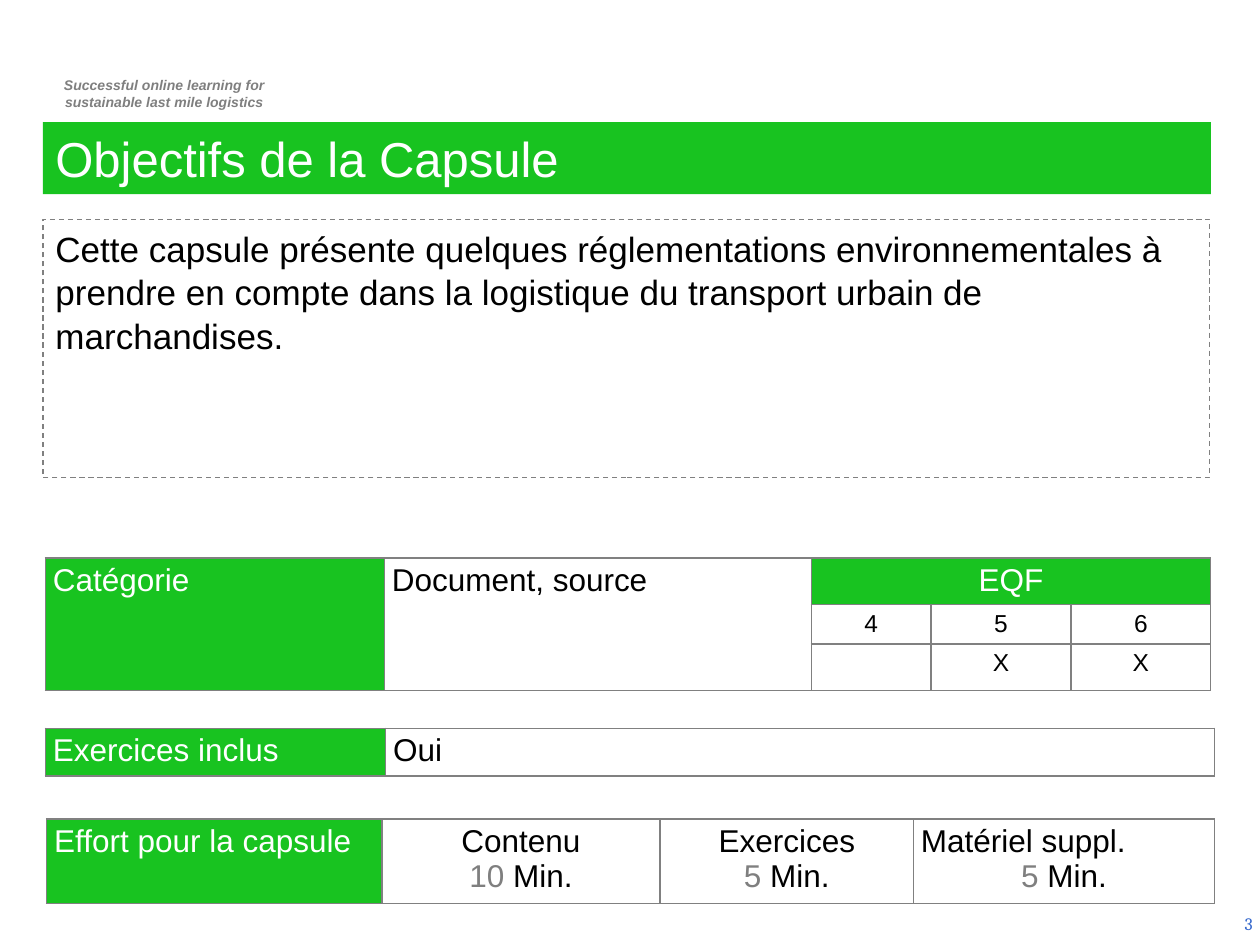
from pptx import Presentation
from pptx.dml.color import RGBColor
from pptx.enum.dml import MSO_LINE
from pptx.enum.text import MSO_ANCHOR as ANCHOR, MSO_AUTO_SIZE, PP_ALIGN as ALIGN
from pptx.oxml.ns import qn
from pptx.util import Inches, Pt
from lxml.etree import SubElement

GREEN = RGBColor(0x18, 0xC3, 0x20)
WHITE = RGBColor(0xFF, 0xFF, 0xFF)
BLACK = RGBColor(0, 0, 0)
GREY = RGBColor(0x80, 0x80, 0x80)
MUTED = RGBColor(0x7F, 0x7F, 0x7F)
BLUE = RGBColor(0x33, 0x66, 0xCC)


def write(tf, *lines, size=18, color=BLACK, font="Arial", align=ALIGN.LEFT,
          bold=False, italic=False, spacing=None):
    """Fill a text frame; a line is a string or a list of (text, colour) runs."""
    for i, line in enumerate(lines):
        p = tf.add_paragraph() if i else tf.paragraphs[0]
        p.alignment = align
        p.space_before = Pt(0)
        if spacing:
            p.line_spacing = spacing
        for text, run_color in [(line, color)] if isinstance(line, str) else line:
            r = p.add_run()
            r.text = text
            f = r.font
            f.name, f.size, f.bold, f.italic = font, Pt(size), bold, italic
            f.color.rgb = run_color


def place(sp, x, y, w, h, anchor=ANCHOR.TOP):
    sp.left, sp.top, sp.width, sp.height = map(Inches, (x, y, w, h))
    tf = sp.text_frame
    tf.word_wrap = True
    tf.auto_size = MSO_AUTO_SIZE.NONE
    tf.vertical_anchor = anchor
    return tf


def add_text(s, box, *lines, anchor=ANCHOR.TOP, **fmt):
    sp = s.shapes.add_textbox(0, 0, 0, 0)
    write(place(sp, *box, anchor=anchor), *lines, **fmt)


def add_title(s, text):
    sp = s.shapes.title
    sp.fill.solid()
    sp.fill.fore_color.rgb = GREEN
    write(place(sp, 0.34, 0.97, 9.27, 0.57), text, size=28, color=WHITE)


def add_summary(s, text):
    sp = s.placeholders[1]
    sp.line.color.rgb = GREY
    sp.line.width = Pt(0.75)
    sp.line.dash_style = MSO_LINE.DASH
    tf = place(sp, 0.34, 1.74, 9.26, 2.05)
    write(tf, text, size=20, spacing=1.04)
    pPr = tf.paragraphs[0]._p.get_or_add_pPr()
    pPr.set("marL", "0")
    pPr.set("indent", "0")
    SubElement(pPr, qn("a:buNone"))


def add_borders(cell):
    tcPr = cell._tc.get_or_add_tcPr()
    for side in ("L", "R", "T", "B"):
        ln = SubElement(tcPr, qn(f"a:ln{side}"), w=str(Pt(1)))
        fill = SubElement(ln, qn("a:solidFill"))
        SubElement(fill, qn("a:srgbClr"), val=str(GREY))


def add_grid(s, x, y, cols, rows):
    """Add an unstyled table with grey borders on every cell."""
    frame = s.shapes.add_table(len(rows), len(cols), Inches(x), Inches(y),
                               Inches(sum(cols)), Inches(sum(rows)))
    table = frame.table
    table.first_row = table.horz_banding = False
    for col, width in zip(table.columns, cols):
        col.width = Inches(width)
    for row, height in zip(table.rows, rows):
        row.height = Inches(height)
    for cell in table.iter_cells():
        cell.margin_left = cell.margin_right = Inches(0.06)
        cell.margin_top = cell.margin_bottom = Inches(0.04)
        add_borders(cell)
        cell.fill.background()
    return table


def label(cell, text, align=ALIGN.JUSTIFY):
    cell.fill.solid()
    cell.fill.fore_color.rgb = GREEN
    write(cell.text_frame, text, color=WHITE, align=align)


def add_category_table(s):
    t = add_grid(s, 0.36, 4.43, [2.69, 3.39, 0.95, 1.11, 1.11], [0.37, 0.31, 0.37])
    for col in (0, 1):
        t.cell(0, col).merge(t.cell(2, col))
    t.cell(0, 2).merge(t.cell(0, 4))
    label(t.cell(0, 0), "Catégorie")
    write(t.cell(0, 1).text_frame, "Document, source", align=ALIGN.JUSTIFY)
    label(t.cell(0, 2), "EQF", align=ALIGN.CENTER)
    for col, (level, mark) in enumerate([("4", ""), ("5", "X"), ("6", "X")], start=2):
        for row, text in ((1, level), (2, mark)):
            write(t.cell(row, col).text_frame, text, size=14, align=ALIGN.CENTER)


def add_exercise_table(s):
    t = add_grid(s, 0.36, 5.78, [2.7, 6.58], [0.38])
    label(t.cell(0, 0), "Exercices inclus")
    write(t.cell(0, 1).text_frame, "Oui", align=ALIGN.JUSTIFY)


def add_effort_table(s):
    t = add_grid(s, 0.37, 6.5, [2.66, 2.21, 2.01, 2.39], [0.67])
    label(t.cell(0, 0), "Effort pour la capsule")
    efforts = [("Contenu", 10), ("Exercices", 5), ("Matériel suppl.", 5)]
    for col, (name, minutes) in enumerate(efforts, start=1):
        write(t.cell(0, col).text_frame, name,
              [(f"{minutes} ", MUTED), ("Min.", BLACK)], align=ALIGN.CENTER)
    t.cell(0, 3).text_frame.paragraphs[0].alignment = ALIGN.LEFT


def main():
    prs = Presentation()
    prs.slide_width, prs.slide_height = Inches(10), Inches(7.5)
    s = prs.slides.add_slide(prs.slide_layouts[1])
    add_text(s, (0.29, 0.56, 2.03, 0.37), "Successful online learning for",
             "sustainable last mile logistics", size=8, color=MUTED,
             align=ALIGN.CENTER, bold=True, italic=True)
    add_text(s, (7.71, 7.13, 2.33, 0.4), "3", size=10, color=BLUE, font="Cambria",
             align=ALIGN.RIGHT, anchor=ANCHOR.MIDDLE)
    add_title(s, "Objectifs de la Capsule")
    add_summary(s, "Cette capsule présente quelques réglementations environnementales "
                   "à prendre en compte dans la logistique du transport urbain de "
                   "marchandises.")
    add_category_table(s)
    add_exercise_table(s)
    add_effort_table(s)
    prs.save("out.pptx")


if __name__ == "__main__":
    main()
